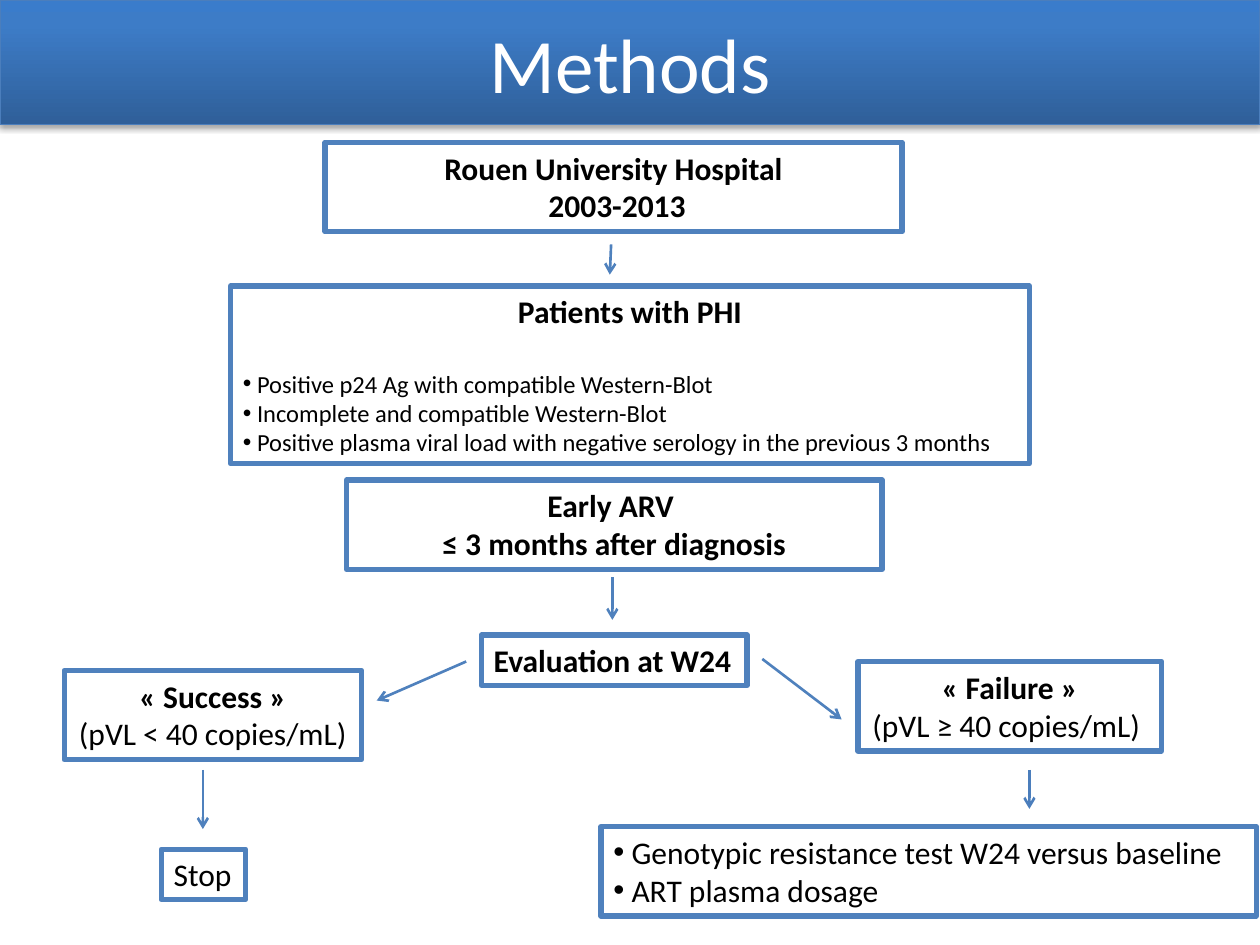
from copy import deepcopy
from lxml import etree
from pptx import Presentation
from pptx import util as u
from pptx.dml.color import RGBColor
from pptx.enum import shapes, text
from pptx.oxml import ns

COLUMNS, ROWS = 100, 75
BLUE, DARK_BLUE, BLACK, WHITE = "4F81BD", "4B7EBC", "000000", "FFFFFF"
CENTER, LEFT = text.PP_ALIGN.CENTER, text.PP_ALIGN.LEFT

deck = Presentation()
deck.slide_width, deck.slide_height = u.Inches(10), u.Inches(7.5)
column, row = deck.slide_width / COLUMNS, deck.slide_height / ROWS
page = deck.slides.add_slide(deck.slide_layouts[6])


def paint(color_format, value):
    color_format.rgb = RGBColor.from_string(value)


def write(para, words, size, color, bold, align):
    para.alignment = align
    span = para.add_run()
    span.text = words
    formats = {"name": "Calibri", "size": u.Pt(size), "bold": bold}
    for key, value in formats.items():
        setattr(span.font, key, value)
    paint(span.font.color, color)


banner = page.shapes.add_shape(
    shapes.MSO_SHAPE.RECTANGLE, 0, 0, deck.slide_width, round(9.9 * row))
banner.fill.gradient()
banner.fill.gradient_angle = 90
stop_list = banner.element.spPr.find(".//" + ns.qn("a:gsLst"))
stop_list.append(deepcopy(stop_list[-1]))
gradient = [(0, "2F5F99"), (0.8, "3D7CC7"), (1, "3A7CCB")]
for stop, (position, color) in zip(banner.fill.gradient_stops, gradient):
    stop.position = position
    paint(stop.color, color)
paint(banner.line.color, DARK_BLUE)
banner.line.width = u.Pt(0.75)
banner.shadow.inherit = False
effects = banner.element.spPr.find(ns.qn("a:effectLst"))
shadow = etree.SubElement(
    effects, ns.qn("a:outerShdw"), blurRad=str(u.Pt(3.1)),
    dist=str(u.Pt(1.8)), dir="5400000", rotWithShape="0")
shade = etree.SubElement(shadow, ns.qn("a:srgbClr"), val=BLACK)
etree.SubElement(shade, ns.qn("a:alpha"), val="35000")
banner.text_frame.vertical_anchor = text.MSO_ANCHOR.MIDDLE
write(banner.text_frame.paragraphs[0], "Methods", 44, WHITE, False, CENTER)

heading = {"size": 18, "bold": True, "align": CENTER}
detail = {"size": 18, "bold": False, "align": CENTER}
plain = {"size": 18, "bold": False, "align": LEFT}
small = {"size": 14, "bold": False, "align": LEFT, "bullet": True}
action = {**plain, "bullet": True}

steps = [
    (25.8, 11.3, 45.8, 7.1, True,
     [("Rouen University Hospital", heading), (" 2003-2013", heading)]),
    (18.3, 22.7, 63.4, 14.1, True,
     [("Patients with PHI", {**heading, "after": 22}),
      ("Positive p24 Ag with compatible Western-Blot", small),
      ("Incomplete and compatible Western-Blot", small),
      ("Positive plasma viral load with negative serology in the previous 3 months", small)]),
    (27.5, 38.1, 42.5, 7.1, True,
     [("Early ARV ", heading), (" ≤ 3 months after diagnosis ", heading)]),
    (38.2, 50.4, 21.1, 4, False,
     [("Evaluation at W24", {**heading, "align": LEFT})]),
    (5.1, 53.2, 23.6, 7.1, False,
     [("« Success »", heading), ("(pVL < 40 copies/mL)", detail)]),
    (12.8, 67.4, 6.7, 4, False, [("Stop", plain)]),
    (68.1, 52.5, 24.1, 7.1, False,
     [("« Failure »", heading), ("(pVL ≥ 40 copies/mL) ", detail)]),
    (47.7, 65.6, 52, 7.1, True,
     [("Genotypic resistance test W24 versus baseline", action),
      ("ART plasma dosage", action)]),
]

for left, top, width, height, wrap, lines in steps:
    box = page.shapes.add_textbox(
        round(left * column), round(top * row),
        round(width * column), round(height * row))
    paint(box.line.color, BLUE)
    box.line.width = u.Pt(3)
    frame = box.text_frame
    frame.word_wrap = wrap
    frame.auto_size = text.MSO_AUTO_SIZE.SHAPE_TO_FIT_TEXT
    for index, (words, style) in enumerate(lines):
        para = frame.add_paragraph() if index else frame.paragraphs[0]
        write(para, words, style["size"], BLACK, style["bold"], style["align"])
        if "after" in style:
            para.space_after = u.Pt(style["after"])
        if "bullet" in style:
            indent = u.Inches(0.008 * style["size"])
            settings = para._p.get_or_add_pPr()
            for key, value in {"marL": indent, "indent": -indent}.items():
                settings.set(key, str(value))
            etree.SubElement(settings, ns.qn("a:buFont"), typeface="Arial")
            etree.SubElement(settings, ns.qn("a:buChar"), char="•")

arrows = [
    (48.5, 19.4, 48.4, 21.8, BLUE),
    (48.6, 45.8, 48.6, 49.2, BLUE),
    (37, 52.5, 29.9, 55.6, BLUE),
    (16.1, 61.1, 16.1, 65.8, BLUE),
    (60.5, 52.3, 66.8, 57.1, BLUE),
    (81.7, 61.1, 81.7, 64.2, DARK_BLUE),
]

for start_x, start_y, end_x, end_y, color in arrows:
    arrow = page.shapes.add_connector(
        shapes.MSO_CONNECTOR.STRAIGHT,
        round(start_x * column), round(start_y * row),
        round(end_x * column), round(end_y * row))
    paint(arrow.line.color, color)
    arrow.line.width = u.Pt(1.5)
    properties = arrow.element.spPr
    etree.SubElement(properties.find(ns.qn("a:ln")), ns.qn("a:tailEnd"), type="arrow")
    etree.SubElement(properties, ns.qn("a:effectLst"))

deck.save("out.pptx")
